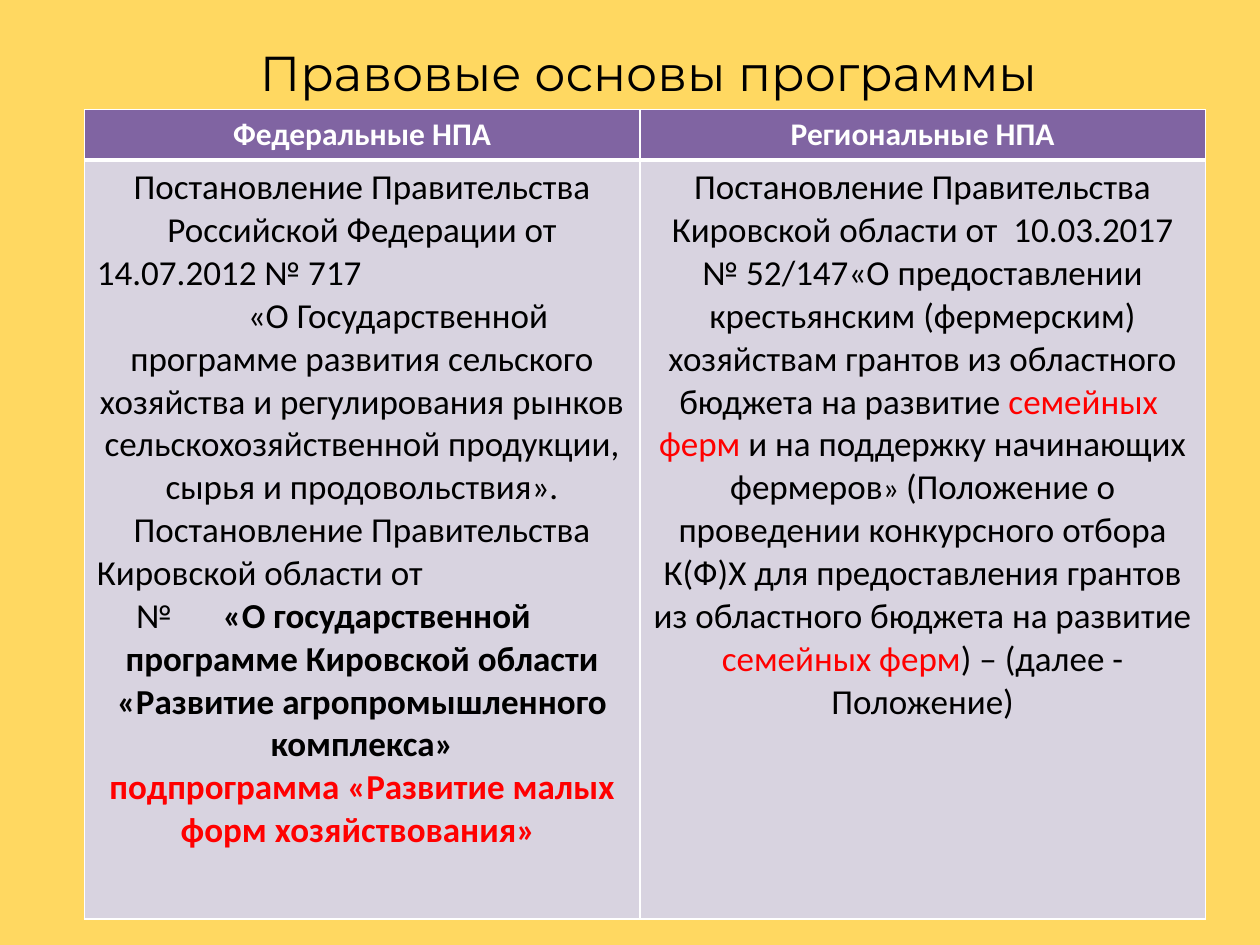
from lxml import etree
from pptx import Presentation
from pptx.dml import color as dml
from pptx.enum import text
from pptx.oxml import ns
from pptx.util import Cm, Pt

BLACK, WHITE, RED = "000000", "FFFFFF", "FF0000"
GOLD, PURPLE, LILAC = "FFD861", "8064A2", "D8D3E0"
LEFT, MID = text.PP_ALIGN.LEFT, text.PP_ALIGN.CENTER


def rgb(code):
    return dml.RGBColor.from_string(code)


def add(parent, tag, **attrs):
    """Append an XML child such as a:lnL."""
    return etree.SubElement(parent, ns.qn(tag), **attrs)


class Deck:
    """Holds the style and the current slide."""

    def __init__(self, font, size):
        self.font, self.size = font, size
        self.prs = Presentation()
        self.prs.slide_width, self.prs.slide_height = Cm(25.4), Cm(19.05)
        self.slide = self.prs.slides.add_slide(self.prs.slide_layouts[6])

    def ground(self, tone):
        fill = self.slide.background.fill
        fill.solid()
        fill.fore_color.rgb = rgb(tone)

    def run(self, para, words, tone=BLACK, bold=False, size=None, font=None):
        run = para.add_run()
        run.text = words
        run.font.name = font or self.font
        run.font.size = Pt(size or self.size)
        run.font.bold = bold
        run.font.color.rgb = rgb(tone)

    def title(self, words, x, y, w, h, size, font):
        frame = self.slide.shapes.add_textbox(Cm(x), Cm(y), Cm(w), Cm(h)).text_frame
        frame.word_wrap = True
        para = frame.paragraphs[0]
        para.alignment = MID
        self.run(para, words, size=size, font=font)

    def edge(self, cell, foot):
        """Draw white cell borders; foot is the width of the lower one."""
        props = cell._tc.get_or_add_tcPr()
        for side, width in zip("LRTB", (1, 1, 1, foot)):
            line = add(props, "a:ln" + side, w=str(Pt(width)))
            add(add(line, "a:solidFill"), "a:srgbClr", val=WHITE)

    def cell(self, cell, paras, tone, foot=1):
        """Fill a cell with paragraphs of (alignment, indent, tab, runs)."""
        self.edge(cell, foot)
        cell.fill.solid()
        cell.fill.fore_color.rgb = rgb(tone)
        frame = cell.text_frame
        for i, (align, indent, tab, runs) in enumerate(paras):
            para = frame.add_paragraph() if i else frame.paragraphs[0]
            para.alignment = align
            props = para._p.get_or_add_pPr()
            if indent:
                props.set("indent", str(Cm(indent)))
            if tab:
                add(add(props, "a:tabLst"), "a:tab", pos=str(Cm(tab)), algn="l")
            for run in runs:
                self.run(para, *run)

    def table(self, heads, bodies, x, y, cols, rows):
        table = self.slide.shapes.add_table(
            len(rows), len(cols), Cm(x), Cm(y), Cm(sum(cols)), Cm(sum(rows))).table
        for row, high in zip(table.rows, rows):
            row.height = Cm(high)
        for i, wide in enumerate(cols):
            table.columns[i].width = Cm(wide)
            head = [(MID, 0, 0, [(heads[i], WHITE, True, 18)])]
            self.cell(table.cell(0, i), head, PURPLE, foot=3)
            self.cell(table.cell(1, i), bodies[i], LILAC)


FEDERAL = [
    (MID, 0, 0, [("Постановление Правительства",)]),
    (MID, 0, 0, [("Российской Федерации от",)]),
    (LEFT, 0, 0, [("14.07.2012 № 717",)]),
    (MID, 1.45, 0, [("«О Государственной программе развития сельского хозяйства "
                     "и регулирования рынков сельскохозяйственной продукции, "
                     "сырья и продовольствия».",)]),
    (MID, 0, 0, [("Постановление Правительства",)]),
    (LEFT, 0, 0, [("Кировской области от",)]),
    (LEFT, 0.79, 3.75, [("№\t",), ("«О государственной", BLACK, True)]),
    (MID, 0, 0, [("программе Кировской области «Развитие "
                  "агропромышленного комплекса»", BLACK, True)]),
    (MID, 0, 0, [("подпрограмма «Развитие малых форм хозяйствования» ", RED, True)]),
]
REGIONAL = [(MID, 0, 0, [
    ("Постановление Правительства Кировской области от  10.03.2017 № 52/147"
     "«О предоставлении крестьянским (фермерским) хозяйствам грантов из "
     "областного бюджета на развитие ",),
    ("семейных  ферм ", RED),
    ("и на поддержку начинающих фермеров",),
    ("» ", BLACK, False, 18),
    ("(Положение о проведении конкурсного отбора К(Ф)Х для предоставления "
     "грантов из областного бюджета на развитие ",),
    ("семейных ферм", RED),
    (") – (далее - Положение)",),
])]


def main():
    deck = Deck("Calibri", 20)
    deck.ground(GOLD)
    deck.title("Правовые основы программы ", 4.5, 0.74, 17.4, 1.45, 28, "Montserrat")
    deck.table(["Федеральные НПА", "Региональные НПА"], [FEDERAL, REGIONAL],
               1.7, 2.21, cols=(11.2, 11.4), rows=(1, 15.3))
    deck.prs.save("out.pptx")


if __name__ == "__main__":
    main()
